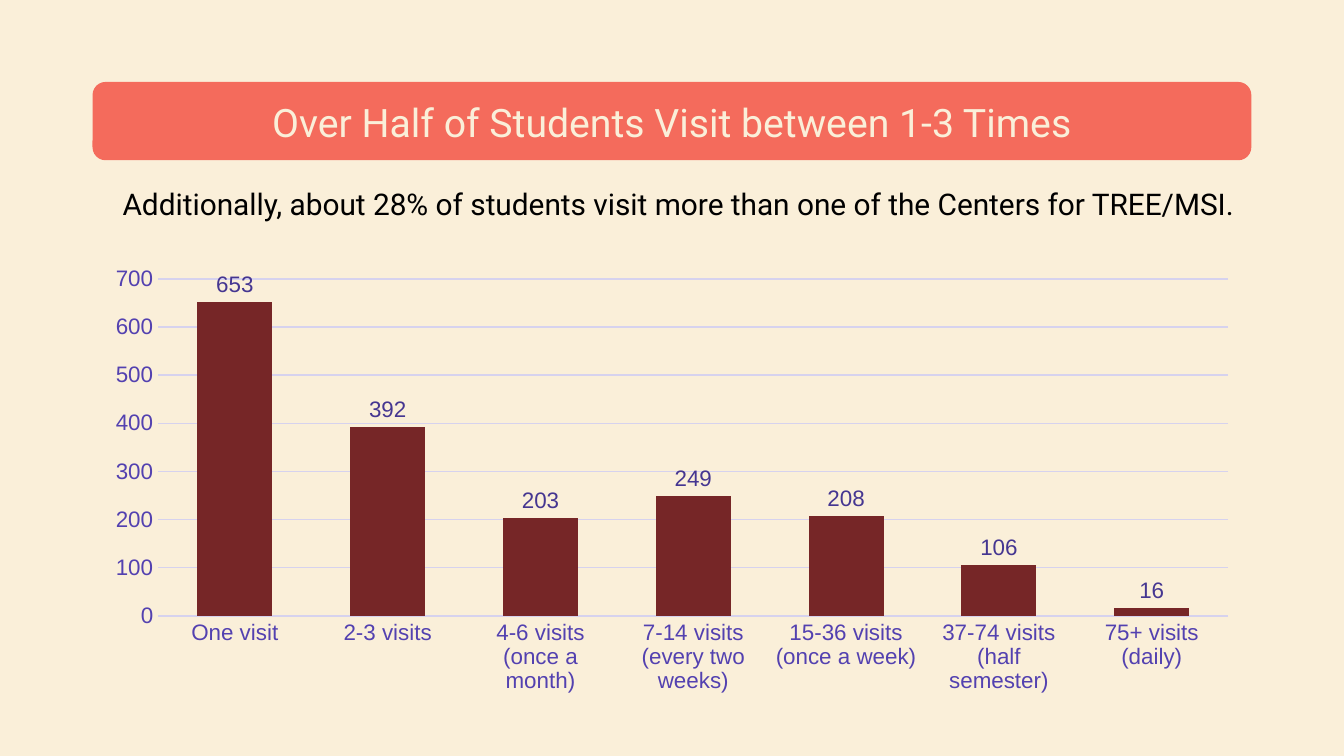
from pptx import Presentation
from pptx.chart.data import CategoryChartData as Data
from pptx.dml.color import RGBColor
from pptx.enum.chart import XL_CHART_TYPE as Kind, XL_LABEL_POSITION as Pos, XL_TICK_MARK as Tick
from pptx.enum.shapes import MSO_SHAPE as Shape
from pptx.enum.text import MSO_ANCHOR as Anchor, PP_ALIGN as Align
from pptx.util import Cm, Pt

# Content
TITLE = "Over Half of Students Visit between 1-3 Times"
NOTE = "Additionally, about 28% of students visit more than one of the Centers for TREE/MSI."
VISITS = [
    ("One visit", 653),
    ("2-3 visits", 392),
    ("4-6 visits (once a month)", 203),
    ("7-14 visits (every two weeks)", 249),
    ("15-36 visits (once a week)", 208),
    ("37-74 visits (half semester)", 106),
    ("75+ visits (daily)", 16),
]

# Colours
CREAM, CORAL, MAROON = "FAEFD9", "F46B5C", "762627"
VIOLET, INDIGO, LILAC, NAVY = "5341B0", "453691", "D6D2EE", "211A46"

LEFT, WIDTH = 1.75, 21.9


def box(x, y, w, h):
    return [Cm(n) for n in (x, y, w, h)]


def paint(fill, color):
    fill.solid()
    fill.fore_color.rgb = RGBColor.from_string(color)


def style(font, size, color, face="Arial"):
    font.size, font.name = Pt(size), face
    font.color.rgb = RGBColor.from_string(color)


def rule(line):
    line.width = Pt(0.75)
    line.color.rgb = RGBColor.from_string(LILAC)


def write(text, place, size=16, color="000000", inset=0.25):
    frame = slide.shapes.add_textbox(*box(*place)).text_frame
    frame.word_wrap = True
    frame.vertical_anchor = Anchor.MIDDLE
    frame.margin_top = frame.margin_bottom = Cm(inset)
    para = frame.paragraphs[0]
    para.text, para.alignment = text, Align.CENTER
    style(para.runs[0].font, size, color, "Roboto")


deck = Presentation()
deck.slide_width, deck.slide_height = Cm(25.4), Cm(14.29)
slide = deck.slides.add_slide(deck.slide_layouts[6])
paint(slide.background.fill, CREAM)

# Title banner
bar = slide.shapes.add_shape(Shape.ROUNDED_RECTANGLE, *box(LEFT, 1.55, WIDTH, 1.48))
bar.shadow.inherit = False
paint(bar.fill, CORAL)
bar.line.fill.background()
write(TITLE, (2, 1.5, 21.4, 1.6), size=21, color=CREAM)

# Chart of visits
data = Data()
data.categories = [name for name, _ in VISITS]
data.add_series("Series 1", [count for _, count in VISITS])
chart = slide.shapes.add_chart(
    Kind.COLUMN_CLUSTERED, *box(LEFT, 4.88, WIDTH, 8.38), data).chart
chart.has_legend = chart.has_title = False
style(chart.font, 10, NAVY)

cat, val = chart.category_axis, chart.value_axis
for axis in (cat, val):
    axis.major_tick_mark = axis.minor_tick_mark = Tick.NONE
    style(axis.tick_labels.font, 12, VIOLET)
rule(cat.format.line)
rule(val.major_gridlines.format.line)
val.format.line.fill.background()
val.minimum_scale, val.maximum_scale, val.major_unit = 0, 700, 100

plot = chart.plots[0]
plot.gap_width, plot.overlap, plot.vary_by_categories = 104, -27, False
bars = plot.series[0]
paint(bars.format.fill, MAROON)
tags = bars.data_labels
tags.show_value, tags.position = True, Pos.OUTSIDE_END
style(tags.font, 12, INDIGO)

# Note under the banner
write(NOTE, (LEFT, 3.38, 22.15, 0.94), inset=0.13)

deck.save("out.pptx")
